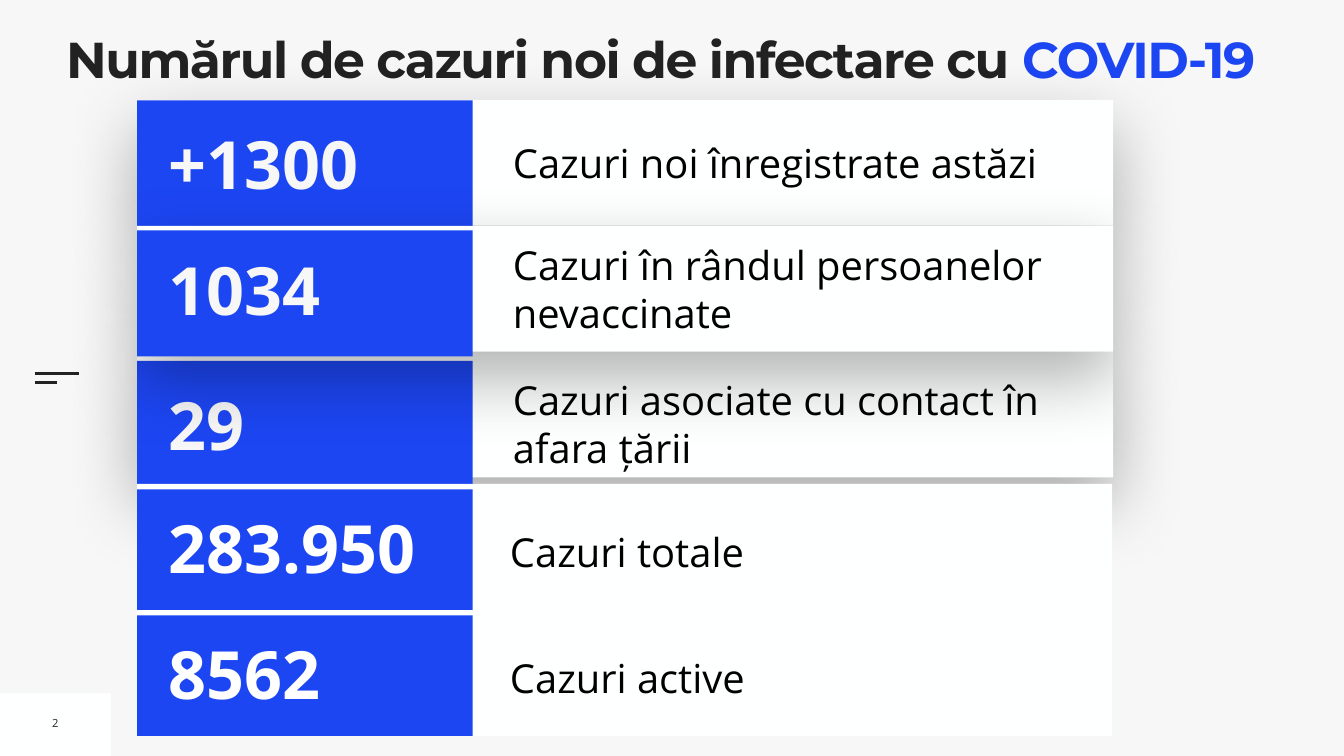
from lxml import etree
from pptx import Presentation
from pptx.dml.color import RGBColor
from pptx.enum.shapes import MSO_CONNECTOR, MSO_SHAPE
from pptx.enum.text import MSO_ANCHOR, MSO_AUTO_SIZE, PP_ALIGN
from pptx.oxml.ns import qn
from pptx.util import Inches, Pt

RECTANGLE = MSO_SHAPE.RECTANGLE
STRAIGHT = MSO_CONNECTOR.STRAIGHT
MIDDLE, TOP = MSO_ANCHOR.MIDDLE, MSO_ANCHOR.TOP
LEFT, CENTER = PP_ALIGN.LEFT, PP_ALIGN.CENTER
NO_AUTOFIT = MSO_AUTO_SIZE.NONE

BACKGROUND = RGBColor(0xF7, 0xF7, 0xF7)
PANEL = RGBColor(0xFE, 0xFF, 0xFF)
BLUE = RGBColor(0x1D, 0x46, 0xF3)
DARK = RGBColor(0x22, 0x22, 0x22)
BLACK = RGBColor(0, 0, 0)
WHITE = RGBColor(0xFF, 0xFF, 0xFF)

prs = Presentation()
prs.slide_width, prs.slide_height = Inches(26.67), Inches(15)
slide = prs.slides.add_slide(prs.slide_layouts[5])
slide.background.fill.solid()
slide.background.fill.fore_color.rgb = BACKGROUND


def add_block(left, top, width, height, color):
    block = slide.shapes.add_shape(
        RECTANGLE, Inches(left), Inches(top), Inches(width), Inches(height))
    block.fill.solid()
    block.fill.fore_color.rgb = color
    block.line.fill.background()
    block.shadow.inherit = False
    return block


def add_label(text, left, top, width, height, size, color, bold=False, inset=0.1):
    label = slide.shapes.add_textbox(
        Inches(left), Inches(top), Inches(width), Inches(height))
    frame = label.text_frame
    frame.word_wrap = True
    frame.vertical_anchor = MIDDLE
    frame.margin_left = frame.margin_right = Inches(inset)
    frame.margin_top = frame.margin_bottom = Inches(inset)
    paragraph = frame.paragraphs[0]
    paragraph.text = text
    paragraph.font.name = "Open Sans"
    paragraph.font.size = Pt(size)
    paragraph.font.bold = bold
    paragraph.font.color.rgb = color
    return paragraph


add_block(0, 13.76, 2.2, 1.24, PANEL)
for dash_y, dash_end in ((7.41, 1.57), (7.59, 1.13)):
    dash = slide.shapes.add_connector(
        STRAIGHT, Inches(0.69), Inches(dash_y), Inches(dash_end), Inches(dash_y))
    dash.line.color.rgb = DARK
    dash.line.width = Pt(3)
    etree.SubElement(dash._element.spPr, qn("a:effectLst"))

page_number = add_label("2", 0.93, 14.09, 0.34, 0.51, 16, DARK)
page_number.alignment = CENTER

title = slide.shapes.title
title.left, title.top = Inches(1.31), Inches(0.78)
title.width, title.height = Inches(23.94), Inches(1.58)
title_frame = title.text_frame
title_frame.word_wrap = True
title_frame.auto_size = NO_AUTOFIT
title_frame.vertical_anchor = TOP
title_frame.margin_left = title_frame.margin_right = 0
title_frame.margin_top = title_frame.margin_bottom = 0
heading = title_frame.paragraphs[0]
heading.alignment = LEFT
heading.line_spacing = 0.8
heading.font.name = "Montserrat"
heading.font.size = Pt(72)
heading.font.bold = True
for words, color in (("Numărul de cazuri noi de infectare cu ", DARK), ("COVID-19", BLUE)):
    run = heading.add_run()
    run.text = words
    run.font.color.rgb = color
    run._r.get_or_add_rPr().set("spc", "-200")

# value, caption, panel top, blue top, blue height, value top, caption top, caption height, raised
rows = [
    ("8562", "Cazuri active", 12.1, 12.21, 2.39, 12.45, 12.68, 1.25, False),
    ("+1300", "Cazuri noi înregistrate astăzi", 1.98, 1.99, 2.5, 2.33, 2.65, 1.16, True),
    ("29", "Cazuri asociate cu contact în afara țării", 6.97, 7.16, 2.5, 7.51, 7.34, 2.12, True),
    ("1034", "Cazuri în rândul persoanelor nevaccinate", 4.48, 4.57, 2.5, 4.83, 4.67, 2.12, True),
    ("283.950", "Cazuri totale", 9.6, 9.71, 2.39, 9.95, 10.24, 1.12, False),
]
for (value, caption, panel_top, blue_top, blue_height,
     value_top, caption_top, caption_height, raised) in rows:
    panel = add_block(2.72, panel_top, 19.37 if raised else 19.35, 2.5, PANEL)
    if raised:
        effects = panel._element.spPr.find(qn("a:effectLst"))
        shadow = etree.SubElement(
            effects, qn("a:outerShdw"), blurRad=str(Pt(100)), dist=str(Pt(40)),
            dir="5400000", algn="ctr", rotWithShape="0")
        shade = etree.SubElement(shadow, qn("a:srgbClr"), val="000000")
        etree.SubElement(shade, qn("a:alpha"), val="30000")
        add_label(caption, 10.08, caption_top, 11.76, caption_height, 57, BLACK)
    else:
        total = add_label(caption, 10.12, caption_top, 11.58, caption_height, 57, BLACK, inset=0)
        total.line_spacing = 1.3
        total.space_before = Pt(20)
    add_block(2.72, blue_top, 6.66, blue_height, BLUE)
    add_label(value, 3.25, value_top, 6.03, 1.8, 95, BACKGROUND if raised else WHITE, bold=True)

prs.save("out.pptx")
